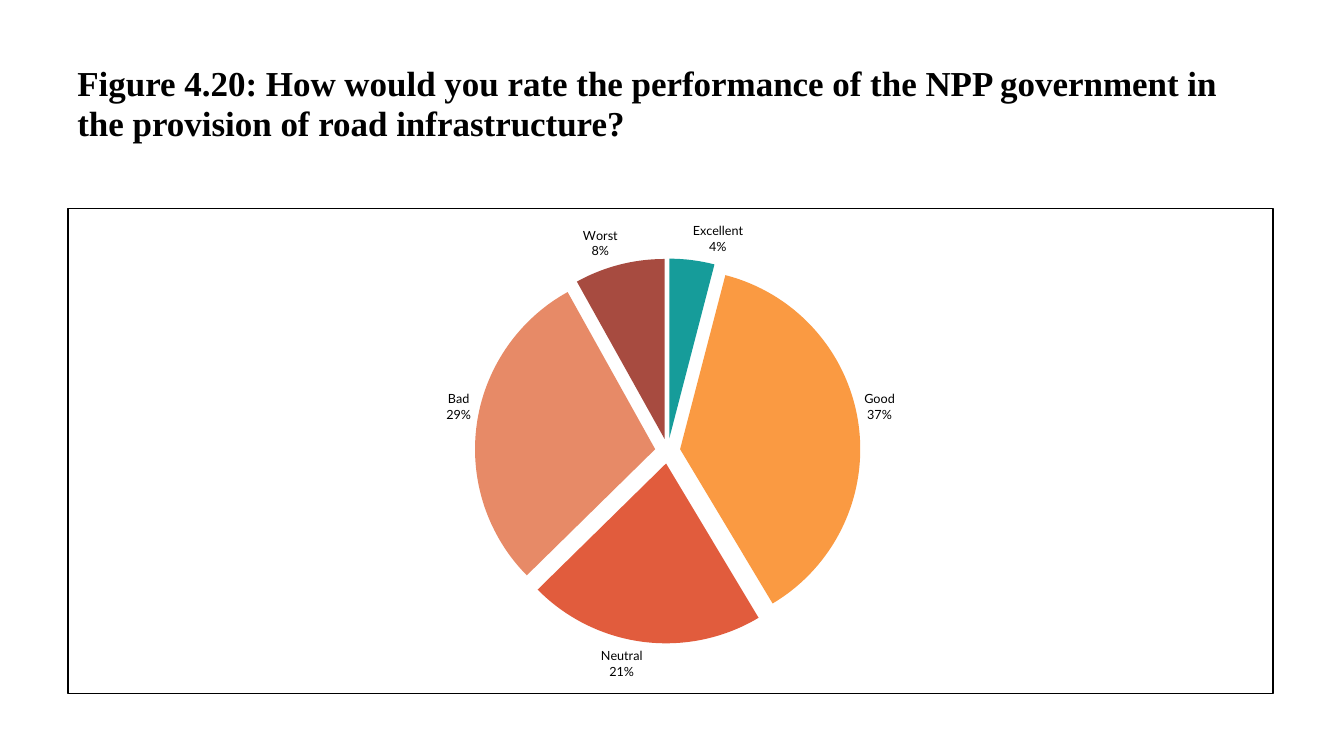
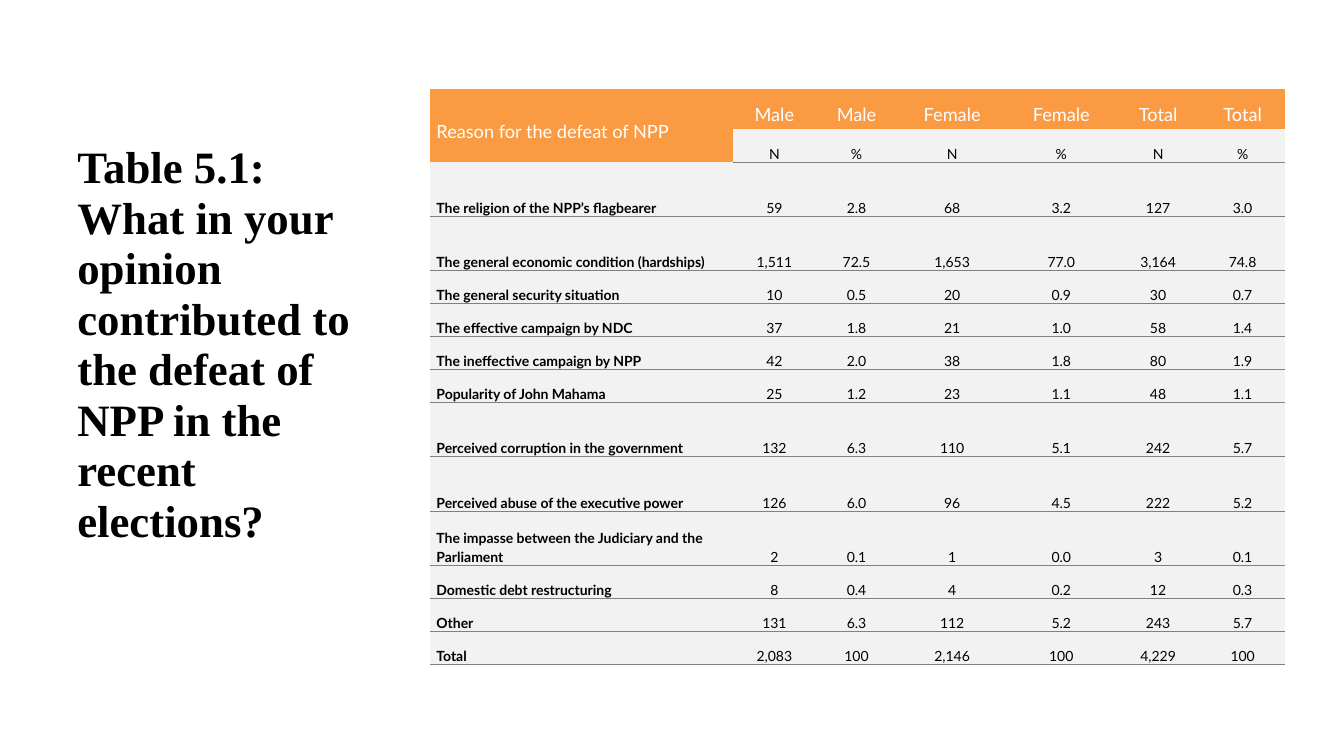
import lxml.etree
import pptx
import pptx.chart.data
import pptx.dml.color
import pptx.enum.chart
import pptx.enum.text
import pptx.oxml
import pptx.oxml.ns
import pptx.util

Cm, Pt = pptx.util.Cm, pptx.util.Pt
ALIGN, ANCHOR = pptx.enum.text.PP_ALIGN, pptx.enum.text.MSO_ANCHOR

# Shared look
TITLE_FONT, BODY_FONT = "Times New Roman", "Lato"
BLACK, WHITE, GREY, PALE = "000000", "FFFFFF", "808080", "F2F2F2"
TEAL, ORANGE, RED, SALMON, BROWN = "169C9A", "FA9A42", "E15C3D", "E78A67", "A74B40"
LEFT = Cm(1.7)


def set_font(font, name, size, color, bold=False):
    font.name, font.size, font.bold = name, Pt(size), bold
    font.color.rgb = pptx.dml.color.RGBColor.from_string(color)


def add_title(page, text, top, width, height, size):
    box = page.shapes.add_textbox(LEFT, top, width, height)
    box.text_frame.word_wrap = True
    para = box.text_frame.paragraphs[0]
    para.text = text
    para.line_spacing = 0.94
    set_font(para.font, TITLE_FONT, size, BLACK, bold=True)


deck = pptx.Presentation()
deck.slide_width, deck.slide_height = Cm(33.87), Cm(19.05)
blank = deck.slide_layouts[6]

# Slide 1: road infrastructure rating
page = deck.slides.add_slide(blank)
add_title(
    page,
    "Figure 4.20: How would you rate the performance of the NPP government "
    "in the provision of road infrastructure?",
    Cm(1.52), Cm(30.4), Cm(3.15), 25,
)

ratings = [
    ("Excellent", 4, TEAL),
    ("Good", 37, ORANGE),
    ("Neutral", 21, RED),
    ("Bad", 29, SALMON),
    ("Worst", 8, BROWN),
]
data = pptx.chart.data.CategoryChartData()
data.categories = [name for name, value, color in ratings]
data.add_series("Series 1", [value for name, value, color in ratings])
chart = page.shapes.add_chart(
    pptx.enum.chart.XL_CHART_TYPE.PIE, LEFT, Cm(5.23), Cm(30.4), Cm(12.27), data
).chart
chart.has_title = chart.has_legend = False
set_font(chart.font, BODY_FONT, 10, BLACK)

# Slice colours and the gap between slices
plot = chart.plots[0]
plot.vary_by_categories = True
series = plot.series[0]
for index, (name, value, color) in enumerate(ratings):
    fill = series.points[index].format.fill
    fill.solid()
    fill.fore_color.rgb = pptx.dml.color.RGBColor.from_string(color)
explosion = lxml.etree.Element(pptx.oxml.ns.qn("c:explosion"), val="7")
series.format.fill  # creates the shape properties that the explosion follows
series._element.find(pptx.oxml.ns.qn("c:spPr")).addnext(explosion)

# Slice labels
plot.has_data_labels = True
labels = plot.data_labels
labels.show_category_name = labels.show_percentage = True
labels.show_value = False
labels.number_format, labels.number_format_is_linked = "0%", False
labels.position = pptx.enum.chart.XL_LABEL_POSITION.OUTSIDE_END
set_font(labels.font, BODY_FONT, 9, BLACK)
separator = lxml.etree.Element(pptx.oxml.ns.qn("c:separator"))
separator.text = "\n"
labels._element.find(pptx.oxml.ns.qn("c:showBubbleSize")).addnext(separator)

# Chart frame
frame = pptx.oxml.parse_xml(
    f'<c:spPr {pptx.oxml.ns.nsdecls("c", "a")}>'
    f'<a:solidFill><a:srgbClr val="{WHITE}"/></a:solidFill>'
    f'<a:ln w="12700"><a:solidFill><a:srgbClr val="{BLACK}"/></a:solidFill></a:ln>'
    "</c:spPr>"
)
chart.element.find(pptx.oxml.ns.qn("c:chart")).addnext(frame)

# Slide 2: reasons for the defeat
page = deck.slides.add_slide(blank)
add_title(
    page,
    "Table 5.1: What in your opinion contributed to the defeat of NPP "
    "in the recent elections?",
    Cm(3.48), Cm(8.08), Cm(13.26), 32,
)

rows = [
    ("Reason for the defeat of NPP", "Male", "Male", "Female", "Female", "Total", "Total"),
    ("", "N", "%", "N", "%", "N", "%"),
    ("The religion of the NPP’s flagbearer", "59", "2.8", "68", "3.2", "127", "3.0"),
    ("The general economic condition (hardships)",
     "1,511", "72.5", "1,653", "77.0", "3,164", "74.8"),
    ("The general security situation", "10", "0.5", "20", "0.9", "30", "0.7"),
    ("The effective campaign by NDC", "37", "1.8", "21", "1.0", "58", "1.4"),
    ("The ineffective campaign by NPP", "42", "2.0", "38", "1.8", "80", "1.9"),
    ("Popularity of John Mahama", "25", "1.2", "23", "1.1", "48", "1.1"),
    ("Perceived corruption in the government", "132", "6.3", "110", "5.1", "242", "5.7"),
    ("Perceived abuse of the executive power", "126", "6.0", "96", "4.5", "222", "5.2"),
    ("The impasse between the Judiciary and the Parliament",
     "2", "0.1", "1", "0.0", "3", "0.1"),
    ("Domestic debt restructuring", "8", "0.4", "4", "0.2", "12", "0.3"),
    ("Other", "131", "6.3", "112", "5.2", "243", "5.7"),
    ("Total", "2,083", "100", "2,146", "100", "4,229", "100"),
]
widths = [7.64, 2.07, 2.07, 2.75, 2.75, 2.13, 2.13]
tall_rows = {2, 3, 8, 9, 10}

table = page.shapes.add_table(
    len(rows), len(widths), Cm(10.84), Cm(2.25), Cm(sum(widths)), Cm(14.48)
).table
table.first_row = table.horz_banding = False
style = table._tbl.tblPr.find(pptx.oxml.ns.qn("a:tableStyleId"))
style.text = "{2D5ABB26-0587-4C30-8999-92F81FD0307C}"  # no style, no grid
for column, width in zip(table.columns, widths):
    column.width = Cm(width)

for r, texts in enumerate(rows):
    table.rows[r].height = Cm(1 if r == 0 else 1.37 if r in tall_rows else 0.83)
    for c, text in enumerate(texts):
        cell = table.cell(r, c)
        header = r == 0 or (r == 1 and c == 0)
        cell.fill.solid()
        cell.fill.fore_color.rgb = pptx.dml.color.RGBColor.from_string(
            ORANGE if header else PALE
        )
        cell.vertical_anchor = ANCHOR.MIDDLE if header else ANCHOR.BOTTOM
        cell.margin_left = cell.margin_right = Cm(0.16)
        cell.margin_top, cell.margin_bottom = Cm(0.2), Cm(0)
        para = cell.text_frame.paragraphs[0]
        para.text = text
        para.alignment = ALIGN.CENTER if c else ALIGN.LEFT
        para.line_spacing, para.space_after = 1.15, Pt(8)
        if header:
            set_font(para.font, BODY_FONT, 13, WHITE)
        else:
            set_font(para.font, BODY_FONT, 10, BLACK, bold=c == 0)
            rule = pptx.oxml.parse_xml(
                f'<a:lnB {pptx.oxml.ns.nsdecls("a")} w="9525"><a:solidFill>'
                f'<a:srgbClr val="{GREY}"/></a:solidFill></a:lnB>'
            )
            cell._tc.get_or_add_tcPr().insert(0, rule)
table.cell(0, 0).merge(table.cell(1, 0))

deck.save("out.pptx")
